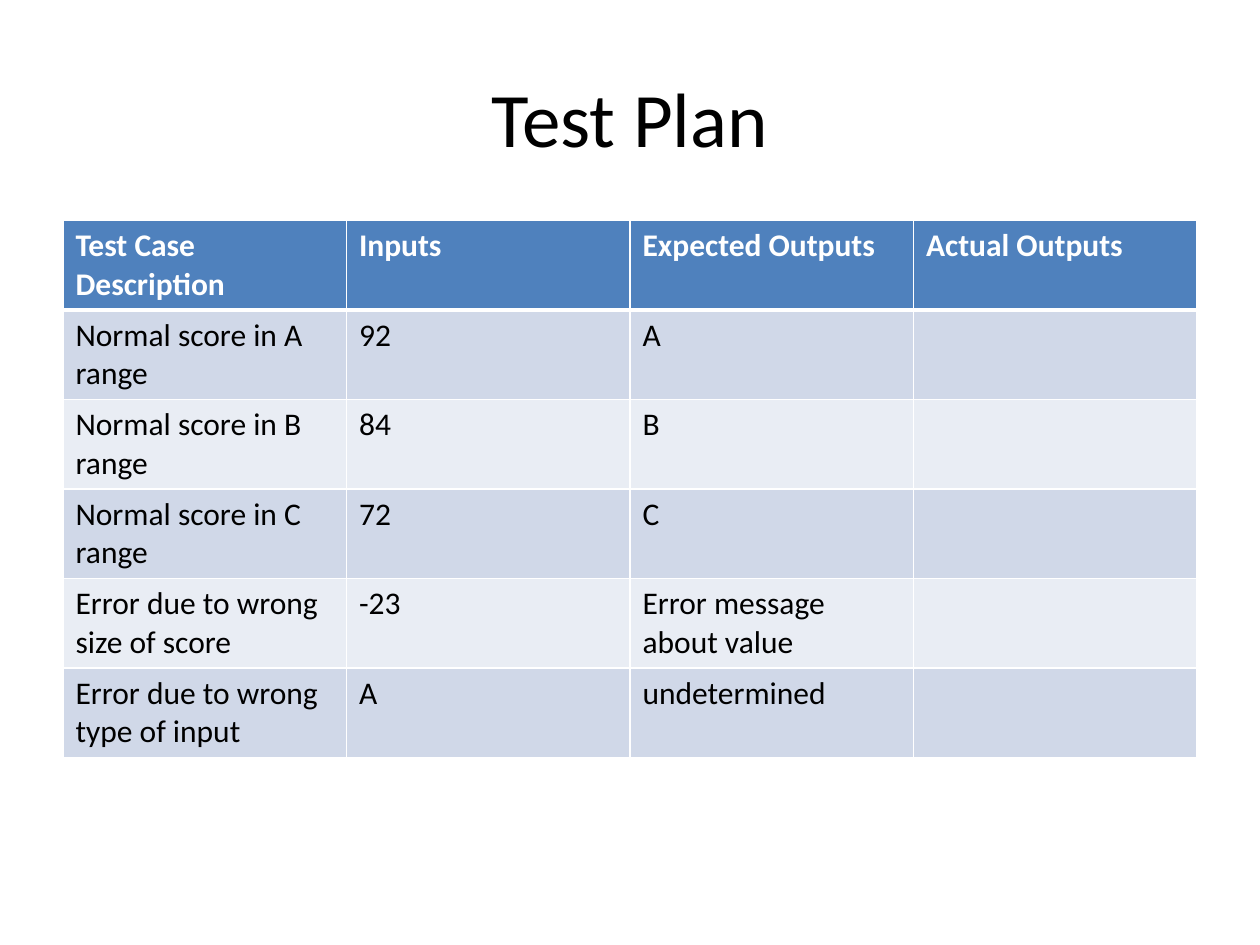
"""Build the Test Plan slide with its table of test cases."""
import pptx
import pptx.dml.color
import pptx.enum.text
import pptx.oxml
import pptx.oxml.ns
import pptx.util

PX = 9144
FONT = "Calibri"
ROWS = [
    ["Test Case Description", "Inputs", "Expected Outputs", "Actual Outputs"],
    ["Normal score in A range", "92", "A", ""],
    ["Normal score in B range", "84", "B", ""],
    ["Normal score in C range", "72", "C", ""],
    ["Error due to wrong size of score", "-23", "Error message about value", ""],
    ["Error due to wrong type of input", "A", "undetermined", ""],
]
HIGH = 41


def color(code):
    return pptx.dml.color.RGBColor.from_string(code)


def border(cell, side, width):
    cell._tc.get_or_add_tcPr().append(pptx.oxml.parse_xml(
        f'<a:ln{side} {pptx.oxml.ns.nsdecls("a")} w="{pptx.util.Pt(width)}">'
        f'<a:solidFill><a:srgbClr val="FFFFFF"/></a:solidFill></a:ln{side}>'))


deck = pptx.Presentation()
deck.slide_width, deck.slide_height = 1000 * PX, 750 * PX
slide = deck.slides.add_slide(deck.slide_layouts[5])

title = slide.shapes.title
title.left, title.top, title.width, title.height = (n * PX for n in (50, 30, 900, 125))
frame = title.text_frame
frame.text = "Test Plan"
frame.vertical_anchor = pptx.enum.text.MSO_ANCHOR.MIDDLE
frame.paragraphs[0].alignment = pptx.enum.text.PP_ALIGN.CENTER
font = frame.paragraphs[0].runs[0].font
font.name, font.size = FONT, pptx.util.Pt(44)
font.color.rgb = color("000000")

table = slide.shapes.add_table(
    len(ROWS), len(ROWS[0]), 50 * PX, 175 * PX, 900 * PX, len(ROWS) * HIGH * PX).table
for r, row in enumerate(ROWS):
    head = r == 0
    back = "4F81BD" if head else ("E9EDF4", "D0D8E8")[r % 2]
    for c, text in enumerate(row):
        cell = table.cell(r, c)
        for side in "LRTB":
            thick = (r, side) in ((0, "B"), (1, "T"))
            border(cell, side, 3 if thick else 1)
        cell.fill.solid()
        cell.fill.fore_color.rgb = color(back)
        cell.text_frame.text = text
        para = cell.text_frame.paragraphs[0]
        para.font.size = pptx.util.Pt(18)
        for run in para.runs:
            run.font.name, run.font.size = FONT, pptx.util.Pt(18)
            run.font.bold = head
            run.font.color.rgb = color("FFFFFF" if head else "000000")

deck.save("out.pptx")
